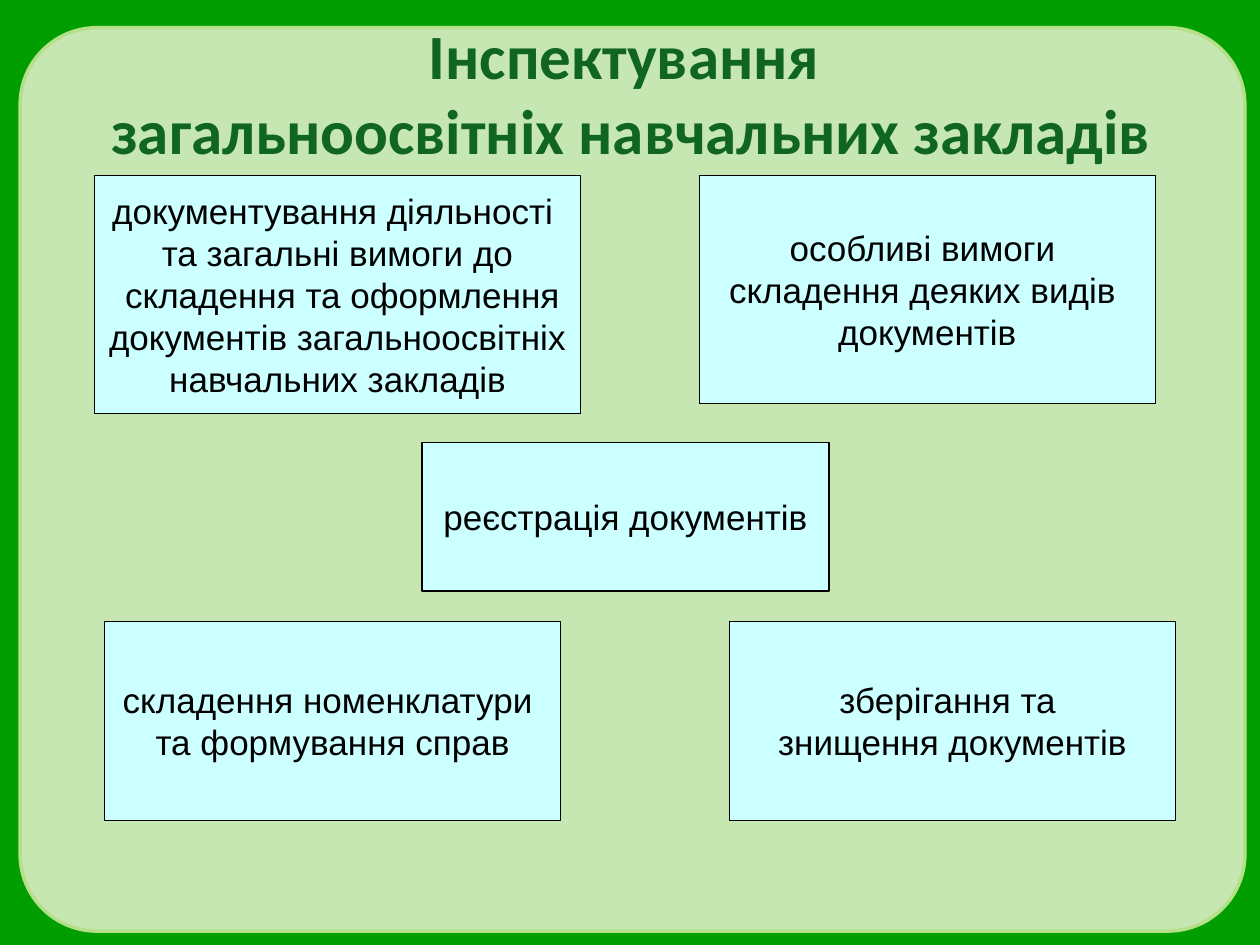
from lxml import etree
from pptx import Presentation
from pptx.dml.color import RGBColor
from pptx.enum.shapes import MSO_SHAPE
from pptx.enum.text import MSO_ANCHOR, PP_ALIGN
from pptx.oxml.ns import qn
from pptx.util import Inches, Pt

RECT = MSO_SHAPE.RECTANGLE
ROUND = MSO_SHAPE.ROUNDED_RECTANGLE
MIDDLE = MSO_ANCHOR.MIDDLE
CENTER = PP_ALIGN.CENTER

CELL = 0.1  # grid of 100 columns by 75 rows, in inches
TOP, MID, LOW = 13.9, 35.1, 49.3

TITLE = "Інспектування \vзагальноосвітніх навчальних закладів"
CARDS = [
    ((7.5, TOP, 38.6, 18.9),
     "документування діяльності \nта загальні вимоги до\n складення та оформлення\n"
     " документів загальноосвітніх \nнавчальних закладів"),
    ((55.5, TOP, 36.2, 18.1),
     "особливі вимоги \nскладення деяких видів \nдокументів"),
    ((33.5, MID, 32.3, 11.8), "реєстрація документів"),
    ((8.3, LOW, 36.2, 15.8), "складення номенклатури \nта формування справ"),
    ((57.9, LOW, 35.4, 15.8), "зберігання та \nзнищення документів"),
]


def color(code):
    return RGBColor.from_string(code)


def place(cells):
    """Turn column, row, width and height in grid cells into lengths."""
    return [Inches(n * CELL) for n in cells]


def add_box(slide, kind, cells, fill, line, width):
    box = slide.shapes.add_shape(kind, *place(cells))
    box.shadow.inherit = False
    box.fill.solid()
    box.fill.fore_color.rgb = color(fill)
    box.line.color.rgb = color(line)
    box.line.width = Pt(width)
    return box


def set_text(shape, text, font, size, code, bold=False):
    frame = shape.text_frame
    frame.text = text
    frame.vertical_anchor = MIDDLE
    for para in frame.paragraphs:
        para.alignment = CENTER
        for run in para.runs:
            run.font.name = font
            run.font.size = Pt(size)
            run.font.bold = bold
            run.font.color.rgb = color(code)


def add_panel(slide):
    panel = add_box(slide, ROUND, (1.6, 2.2, 97.2, 71.7), "DCF0C6", "B6DF89", 2)
    panel.adjustments[0] = 0.085
    tint = panel.fill._xPr.find(qn("a:solidFill"))[0]
    etree.SubElement(tint, qn("a:alpha")).set("val", "90000")


def add_title(slide):
    title = slide.shapes.add_textbox(*place((5.1, 2.1, 90, 10.4)))
    title.text_frame.word_wrap = True
    set_text(title, TITLE, "Calibri", 36, "106620", bold=True)


def add_card(slide, cells, text):
    card = add_box(slide, RECT, cells, "CCFFFF", "000000", 0.75)
    card.text_frame.word_wrap = False
    set_text(card, text, "Arial", 20, "000000")


def main():
    deck = Presentation()
    deck.slide_width, deck.slide_height = Inches(10), Inches(7.5)
    slide = deck.slides.add_slide(deck.slide_layouts[6])
    back = slide.background.fill
    back.solid()
    back.fore_color.rgb = color("009E00")
    add_panel(slide)
    add_title(slide)
    for cells, text in CARDS:
        add_card(slide, cells, text)
    deck.save("out.pptx")


if __name__ == "__main__":
    main()
